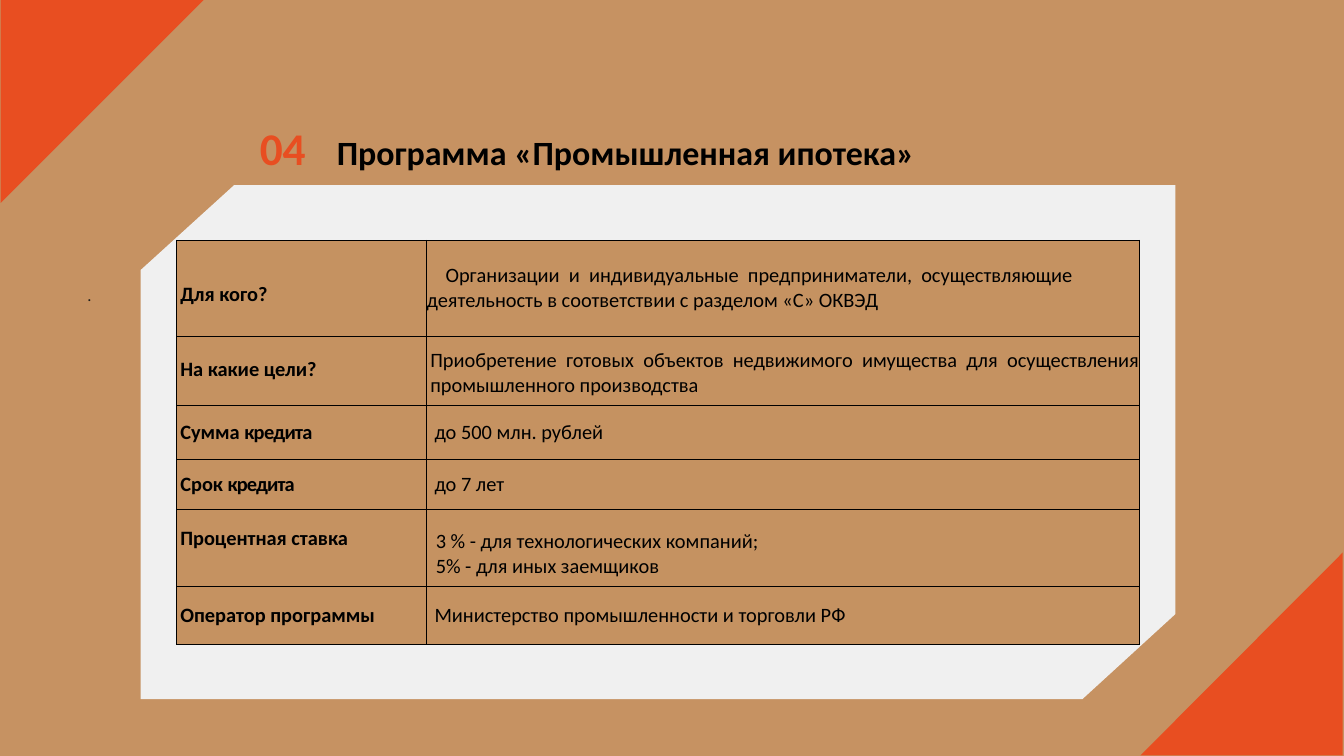
from dataclasses import dataclass

from lxml.etree import SubElement
from pptx import Presentation
from pptx.dml.color import RGBColor
from pptx.enum.text import MSO_ANCHOR, MSO_AUTO_SIZE, PP_ALIGN
from pptx.oxml.ns import qn
from pptx.util import Emu, Pt

PX = 9144  # EMU in one px, 100 px to the inch
WIDTH, HEIGHT = 2199, 1237


@dataclass(frozen=True)
class Theme:
    font: str = "Calibri"
    ground: str = "C69262"
    accent: str = "E84E21"
    panel: str = "F0F0F0"
    cell: str = "C59261"
    ink: str = "000000"
    mark: str = "1D1D1B"
    number_size: float = 53.4
    title_size: float = 40
    table_size: float = 24
    mark_size: float = 19.5


@dataclass(frozen=True)
class Entry:
    """Text of one table cell, with its insets in px."""
    lines: tuple
    left: int = 6
    top: int = 0
    right: int = 0
    bottom: int = 0
    first_indent: int = 0
    anchor: MSO_ANCHOR = MSO_ANCHOR.MIDDLE
    align: PP_ALIGN = PP_ALIGN.LEFT
    bold: bool = False
    tight: float = 0  # letter spacing of the last word, in points


def px(*lengths):
    return [Emu(length * PX) for length in lengths]


def color(code):
    return RGBColor.from_string(code)


class Page:
    def __init__(self, deck, theme):
        self.theme = theme
        self.slide = deck.slides.add_slide(deck.slide_layouts[5])
        self.shapes = self.slide.shapes
        fill = self.slide.background.fill
        fill.solid()
        fill.fore_color.rgb = color(theme.ground)

    def style(self, span, size, code, bold=False):
        font = span.font
        font.name, font.size, font.bold = self.theme.font, Pt(size), bold
        font.color.rgb = color(code)

    def polygon(self, points, code):
        builder = self.shapes.build_freeform(*points[0], scale=PX)
        builder.add_line_segments(points[1:], close=True)
        shape = builder.convert_to_shape()
        shape.shadow.inherit = False
        shape.fill.solid()
        shape.fill.fore_color.rgb = color(code)
        shape.line.fill.background()

    def frame(self, box, left=0):
        """Give a text box its insets and return its first paragraph."""
        frame = box.text_frame
        frame.word_wrap = True
        frame.auto_size = MSO_AUTO_SIZE.NONE
        frame.vertical_anchor = MSO_ANCHOR.TOP
        frame.margin_left, frame.margin_top = px(left, 1)
        frame.margin_right = frame.margin_bottom = 0
        para = frame.paragraphs[0]
        para.alignment = PP_ALIGN.LEFT
        para.space_before = Pt(1)
        return para

    def title(self, number, text, place, left, tab):
        box = self.shapes.title
        box.left, box.top, box.width, box.height = px(*place)
        para = self.frame(box, left)
        para.text = number + "\t"
        self.style(para.runs[0], self.theme.number_size, self.theme.accent, True)
        span = para.add_run()
        span.text = text
        self.style(span, self.theme.title_size, self.theme.ink, True)
        stops = SubElement(para._p.get_or_add_pPr(), qn("a:tabLst"))
        SubElement(stops, qn("a:tab"), pos=str(tab * PX), algn="l")

    def text(self, text, place):
        para = self.frame(self.shapes.add_textbox(*px(*place)))
        para.text = text
        self.style(para.runs[0], self.theme.mark_size, self.theme.mark)

    def table(self, rows, place, widths, heights):
        table = self.shapes.add_table(len(rows), len(widths), *px(*place)).table
        table.first_row = table.horz_banding = False
        for column, width in zip(table.columns, px(*widths)):
            column.width = width
        for row, height, entries in zip(table.rows, px(*heights), rows):
            row.height = height
            for cell, entry in zip(row.cells, entries):
                self.fill_cell(cell, entry)

    def fill_cell(self, cell, entry):
        cell.margin_left, cell.margin_top = px(entry.left, entry.top)
        cell.margin_right, cell.margin_bottom = px(entry.right, entry.bottom)
        cell.vertical_anchor = entry.anchor
        self.borders(cell)
        cell.fill.solid()
        cell.fill.fore_color.rgb = color(self.theme.cell)
        cell.text_frame.text = "\n".join(entry.lines)
        for para in cell.text_frame.paragraphs:
            para.alignment = entry.align
            if entry.first_indent:
                para._p.get_or_add_pPr().set("indent", str(entry.first_indent * PX))
            if entry.tight:
                first, last = para.text.rsplit(" ", 1)
                para.text = first + " "
                span = para.add_run()
                span.text = last
                span._r.get_or_add_rPr().set("spc", str(int(entry.tight * 100)))
            for span in para.runs:
                self.style(span, self.theme.table_size, self.theme.ink, entry.bold)

    def borders(self, cell):
        properties = cell._tc.get_or_add_tcPr()
        for side in ("lnL", "lnR", "lnT", "lnB"):
            line = SubElement(properties, qn(f"a:{side}"), w=str(Pt(1)))
            fill = SubElement(line, qn("a:solidFill"))
            SubElement(fill, qn("a:srgbClr"), val=self.theme.ink)


def label(text, **options):
    return Entry((text,), bold=True, **options)


def value(*lines, left=13, **options):
    return Entry(lines, left=left, **options)


ROWS = [
    (label("Для кого?", top=68, anchor=MSO_ANCHOR.TOP),
     value("Организации и индивидуальные предприниматели, осуществляющие "
           "деятельность в соответствии с разделом «С» ОКВЭД",
           left=0, right=109, first_indent=31, align=PP_ALIGN.JUSTIFY)),
    (label("На какие цели?", top=34, anchor=MSO_ANCHOR.TOP),
     value("Приобретение готовых объектов недвижимого имущества для "
           "осуществления промышленного производства",
           left=6, top=5, align=PP_ALIGN.JUSTIFY)),
    (label("Сумма кредита", tight=-0.8), value("до 500 млн. рублей")),
    (label("Срок кредита", tight=-1), value("до 7 лет")),
    (label("Процентная ставка", bottom=32),
     value("3 % - для технологических компаний;", "5% - для иных заемщиков",
           left=15, top=19)),
    (label("Оператор программы"),
     value("Министерство промышленности и торговли РФ")),
]


def main():
    deck = Presentation()
    deck.slide_width, deck.slide_height = px(WIDTH, HEIGHT)
    theme = Theme()
    page = Page(deck, theme)
    page.polygon([(333, 0), (1, 0), (1, 332)], theme.accent)
    page.polygon([(2197, 904), (1866, 1236), (2197, 1236)], theme.accent)
    page.polygon([(1923, 303), (383, 303), (230, 442), (230, 1144),
                  (1771, 1144), (1923, 1005)], theme.panel)
    page.title("04", "Программа «Промышленная ипотека»",
               (391, 195, 1593, 91), left=34, tab=126)
    page.text(".", (143, 466, 10, 35))
    page.table(ROWS, (289, 393, 1575, 661), (409, 1166),
               (158, 113, 87, 83, 125, 95))
    deck.save("out.pptx")


if __name__ == "__main__":
    main()
